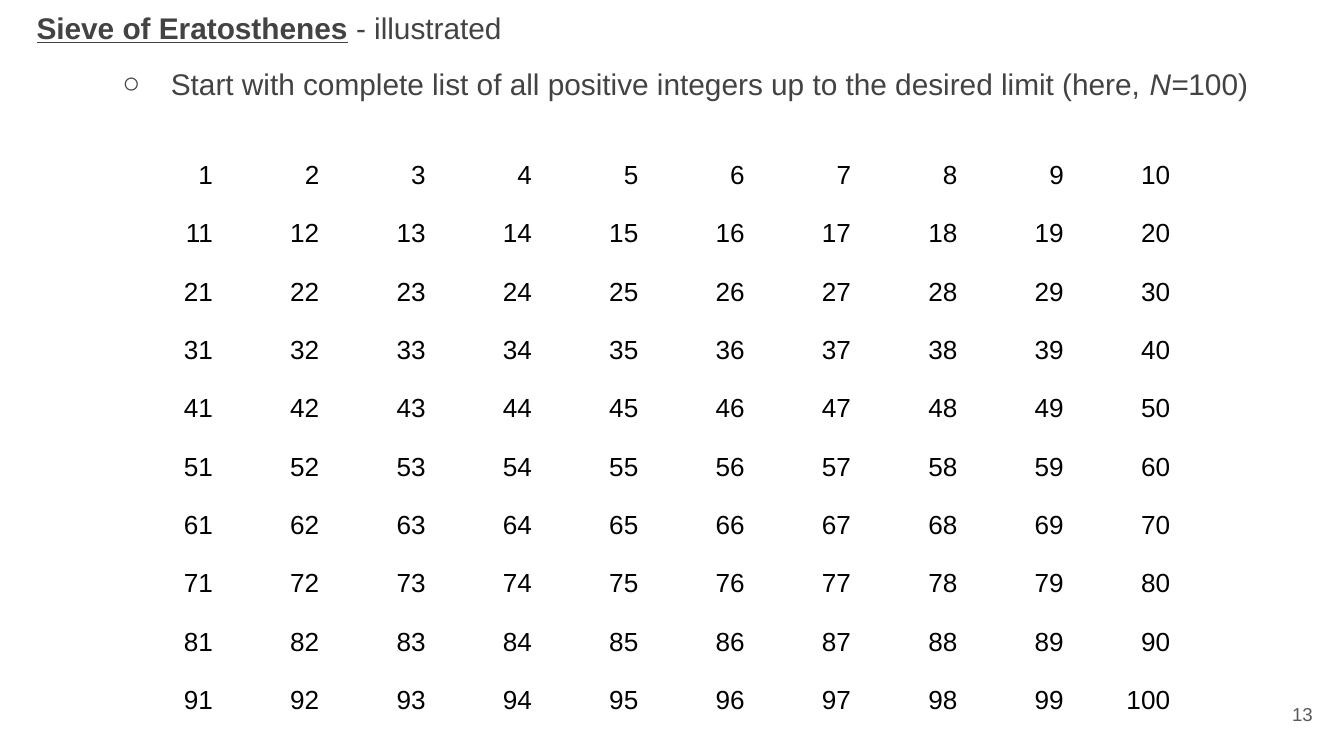
from typing import NamedTuple

from lxml import etree
from pptx import Presentation
from pptx.dml.color import RGBColor
from pptx.enum import text as t
from pptx.oxml.ns import qn
from pptx.util import Pt

COLORS = {"body": "434343", "number": "000000", "page": "595959"}
FONT = "Arial"
INSET = 7.2
SIDE = 10  # numbers per row and per column


class Box(NamedTuple):
    left: float
    top: float
    width: float
    height: float

    def lengths(self) -> list:
        return [Pt(n) for n in self]


def add_run(para, words: str, *, size: float = 16, color: str = "body",
            bold: bool = False, italic: bool = False, under: bool = False) -> None:
    run = para.add_run()
    run.text = words
    font = run.font
    font.name, font.size = FONT, Pt(size)
    font.bold, font.italic, font.underline = bold, italic, under
    font.color.rgb = RGBColor.from_string(COLORS[color])


def set_inset(item) -> None:
    """Give a text frame or a table cell the same margin on all sides."""
    item.margin_left = item.margin_right = Pt(INSET)
    item.margin_top = item.margin_bottom = Pt(INSET)


def add_box(slide, box: Box, anchor=t.MSO_ANCHOR.TOP):
    frame = slide.shapes.add_textbox(*box.lengths()).text_frame
    frame.word_wrap = True
    frame.vertical_anchor = anchor
    set_inset(frame)
    return frame


def set_bullet(para, mark: str, left: float, hang: float) -> None:
    props = para._p.get_or_add_pPr()
    props.set("marL", str(Pt(left)))
    props.set("indent", str(Pt(-hang)))
    color = etree.SubElement(props, qn("a:buClr"))
    etree.SubElement(color, qn("a:srgbClr"), val=COLORS["body"])
    etree.SubElement(props, qn("a:buFont"), typeface=FONT)
    etree.SubElement(props, qn("a:buChar"), char=mark)


def add_intro(slide, box: Box) -> None:
    frame = add_box(slide, box)
    head, step = frame.paragraphs[0], frame.add_paragraph()
    for para in (head, step):
        para.line_spacing = 1.15
        para.space_before = Pt(8)
    add_run(head, "Sieve of Eratosthenes", bold=True, under=True)
    add_run(head, " - illustrated")

    step.level = 1
    step.space_after = Pt(8)
    set_bullet(step, "○", left=72, hang=26)
    add_run(step, "Start with complete list of all positive integers "
                  "up to the desired limit (here, ")
    add_run(step, "N=", italic=True)
    add_run(step, "100)")


def add_grid(slide, box: Box) -> None:
    """Count from 1 to SIDE squared, row by row."""
    table = slide.shapes.add_table(SIDE, SIDE, *box.lengths()).table
    table.first_row = table.horz_banding = False
    for col in table.columns:
        col.width = Pt(box.width / SIDE)
    for row in table.rows:
        row.height = Pt(box.height / SIDE)
    for count, cell in enumerate(table.iter_cells(), 1):
        cell.fill.background()
        set_inset(cell)
        para = cell.text_frame.paragraphs[0]
        para.alignment = t.PP_ALIGN.RIGHT
        add_run(para, str(count), size=14, color="number")


def add_page(slide, box: Box, page: int) -> None:
    para = add_box(slide, box, t.MSO_ANCHOR.MIDDLE).paragraphs[0]
    para.alignment = t.PP_ALIGN.RIGHT
    add_run(para, str(page), size=10, color="page")


def main() -> None:
    deck = Presentation()
    deck.slide_width, deck.slide_height = Pt(720), Pt(405)
    slide = deck.slides.add_slide(deck.slide_layouts[6])
    add_page(slide, Box(667.2, 367.2, 43.2, 31), 13)
    add_intro(slide, Box(12.5, -5, 697.5, 63.5))
    add_grid(slide, Box(64.3, 79, 570, 301))
    deck.save("out.pptx")


if __name__ == "__main__":
    main()
